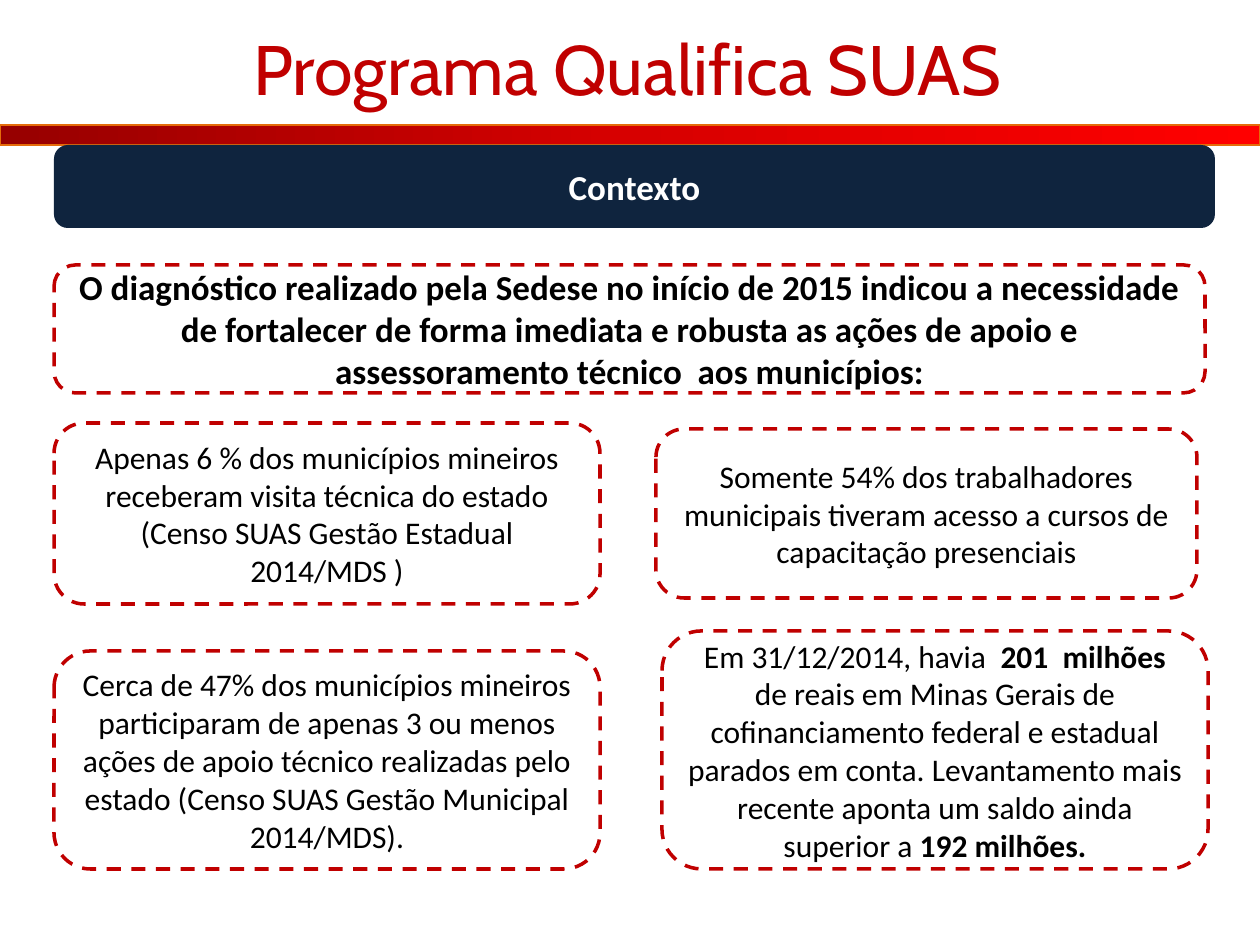
from copy import deepcopy
from pptx import Presentation
from pptx.dml.color import RGBColor
from pptx.enum.dml import MSO_LINE
from pptx.enum.shapes import MSO_SHAPE
from pptx.enum.text import MSO_ANCHOR, PP_ALIGN
from pptx.oxml.ns import qn
from pptx.util import Pt

SCALE = 914400 / 126
COLORS = {
    "red": "C00000",
    "navy": "0F243E",
    "orange": "E46C0A",
    "black": "000000",
    "white": "FFFFFF",
    "bar_start": "970000",
    "bar_middle": "D70000",
    "bar_end": "FF0000",
}


def color(name):
    return RGBColor.from_string(COLORS[name])


def write(box, spans, size, ink, font="Calibri"):
    frame = box.text_frame
    frame.word_wrap = True
    frame.vertical_anchor = MSO_ANCHOR.MIDDLE
    paragraph = frame.paragraphs[0]
    paragraph.alignment = PP_ALIGN.CENTER
    for text, bold in spans:
        span = paragraph.add_run()
        span.text = text
        for name, value in {"name": font, "size": Pt(size), "bold": bold}.items():
            setattr(span.font, name, value)
        span.font.color.rgb = color(ink)


deck = Presentation()
deck.slide_width = round(1260 * SCALE)
deck.slide_height = round(945 * SCALE)
page = deck.slides.add_slide(deck.slide_layouts[5])

title = page.shapes.title
for name, value in {"left": 0, "top": -34, "width": 1255, "height": 203}.items():
    setattr(title, name, round(value * SCALE))
write(title, [("Programa Qualifica SUAS", False)], 40, "red", "Cabin")

bar = page.shapes.add_shape(
    MSO_SHAPE.RECTANGLE, *[round(value * SCALE) for value in (0, 125, 1260, 20)]
)
bar.shadow.inherit = False
bar.fill.gradient()
bar.fill.gradient_angle = 0
stop_list = bar.element.spPr.find(qn("a:gradFill")).find(qn("a:gsLst"))
middle = deepcopy(stop_list[0])
stop_list.insert(1, middle)
stops = zip(bar.fill.gradient_stops, ("bar_start", "bar_middle", "bar_end"), (0, 0.5, 1))
for stop, name, position in stops:
    stop.color.rgb = color(name)
    stop.position = position
bar.line.color.rgb = color("orange")
bar.line.width = Pt(1)

LEFT, COLUMN = 54, 546
boxes = [
    ((LEFT, 265, 1151, 128), 20, [
        ("O diagnóstico realizado pela Sedese no início de 2015 indicou a necessidade "
         "de fortalecer de forma imediata e robusta as ações de apoio e "
         "assessoramento técnico  aos municípios:", True),
    ]),
    ((LEFT, 145, 1161, 83), 20, [("Contexto", True)]),
    ((LEFT, 651, COLUMN, 218), 18, [
        ("Cerca de 47% dos municípios mineiros participaram de apenas 3 ou menos "
         "ações de apoio técnico realizadas pelo estado (Censo SUAS Gestão Municipal "
         "2014/MDS).", False),
    ]),
    ((656, 429, 541, 169), 18, [
        ("Somente 54% dos trabalhadores municipais tiveram acesso a cursos de "
         "capacitação presenciais", False),
    ]),
    ((LEFT, 423, COLUMN, 181), 18, [
        ("Apenas 6 % dos municípios mineiros receberam visita técnica do estado "
         "(Censo SUAS Gestão Estadual 2014/MDS )", False),
    ]),
    ((662, 631, COLUMN, 238), 18, [
        ("Em 31/12/2014, havia  ", False),
        ("201  milhões ", True),
        ("de reais em Minas Gerais de cofinanciamento federal e estadual parados em "
         "conta. Levantamento mais recente aponta um saldo ainda superior a ", False),
        ("192 milhões.", True),
    ]),
]
for place, size, spans in boxes:
    box = page.shapes.add_shape(
        MSO_SHAPE.ROUNDED_RECTANGLE, *[round(value * SCALE) for value in place]
    )
    box.shadow.inherit = False
    if spans[0][0] == "Contexto":
        box.fill.solid()
        box.fill.fore_color.rgb = color("navy")
        box.line.fill.background()
        write(box, spans, size, "white")
    else:
        box.fill.background()
        box.line.color.rgb = color("red")
        box.line.width = Pt(2)
        box.line.dash_style = MSO_LINE.DASH
        write(box, spans, size, "black")

deck.save("out.pptx")
